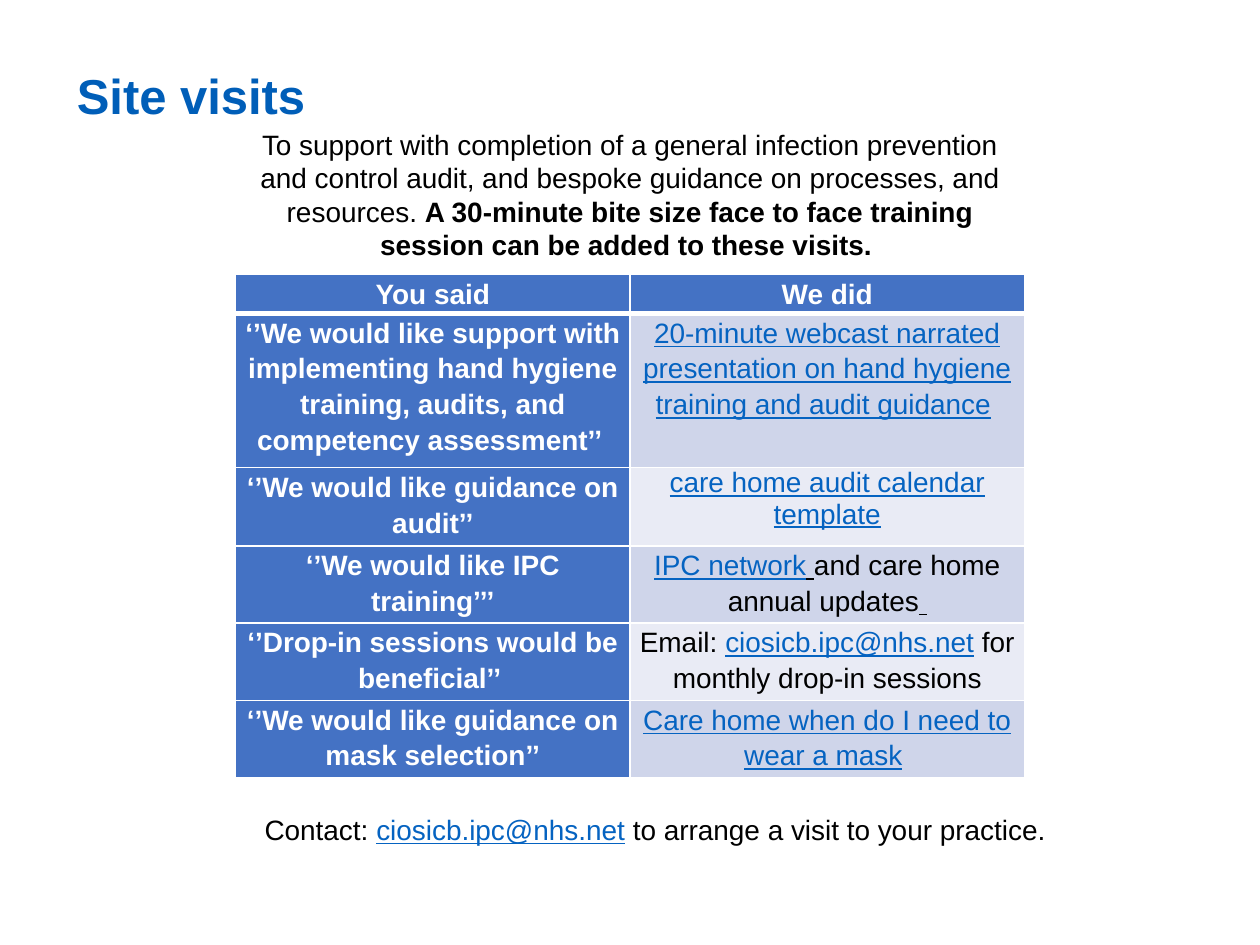
from lxml.etree import SubElement
from pptx import Presentation
from pptx.dml.color import RGBColor
from pptx.enum.text import MSO_ANCHOR, PP_ALIGN
from pptx.oxml.ns import qn
from pptx.util import Inches, Pt

TITLE_BLUE = RGBColor(0x00, 0x5E, 0xB8)
LINK_BLUE = RGBColor(0x05, 0x63, 0xC1)
HEADER_BLUE = RGBColor(0x44, 0x72, 0xC4)
BAND_DARK = RGBColor(0xCF, 0xD5, 0xEA)
BAND_LIGHT = RGBColor(0xE9, 0xEB, 0xF5)
BLACK = RGBColor(0, 0, 0)
WHITE = RGBColor(0xFF, 0xFF, 0xFF)

# Run styles: colour, bold, underlined
PLAIN = (BLACK, False, False)
STRONG = (BLACK, True, False)
HEADING = (WHITE, True, False)
LINK = (LINK_BLUE, False, True)
UNDERLINED = (BLACK, False, True)
TITLE = (TITLE_BLUE, True, False)

EMAIL = ("ciosicb.ipc@nhs.net", LINK)
INTRO = [
    ("To support with completion of a general infection prevention and control audit, "
     "and bespoke guidance on processes, and resources. ", PLAIN),
    ("A 30-minute bite size face to face training session can be added to these visits. ", STRONG),
]
CONTACT = [("Contact: ", PLAIN), EMAIL, (" to arrange a visit to your practice.", PLAIN)]

# You said, we did, row height
ROWS = [
    ("You said", [("We did", HEADING)], 0.3),
    ("‘’We would like support with implementing hand hygiene training, audits, "
     "and competency assessment’’ ",
     [("20-minute webcast narrated presentation on hand hygiene training and audit guidance", LINK),
      (" ", PLAIN)], 1.22),
    ("‘’We would like guidance on audit’’",
     [("care home audit calendar template", LINK)], 0.62),
    ("‘’We would like IPC training’’’",
     [("IPC network", LINK), (" ", UNDERLINED), ("and care home annual updates", PLAIN),
      (" ", UNDERLINED)], 0.61),
    ("‘’Drop-in sessions would be beneficial’’ ",
     [("Email: ", PLAIN), EMAIL, (" for monthly drop-in sessions", PLAIN)], 0.61),
    ("‘’We would like guidance on mask selection’’",
     [("Care home when do I need to wear a mask", LINK), (" ", PLAIN)], 0.61),
]
SINGLE_SPACED_ROW = 2
COLUMN_WIDTH = 3.13


def add_runs(paragraph, runs, size=16, align=PP_ALIGN.CENTER):
    paragraph.alignment = align
    for text, (colour, bold, underlined) in runs:
        run = paragraph.add_run()
        run.text = text
        run.font.name = "Arial"
        run.font.size = Pt(size)
        run.font.bold = bold
        run.font.underline = underlined
        run.font.color.rgb = colour


def add_text(slide, runs, left, top, width, height, anchor, wrap):
    frame = slide.shapes.add_textbox(*map(Inches, (left, top, width, height))).text_frame
    frame.word_wrap = wrap
    frame.vertical_anchor = anchor
    add_runs(frame.paragraphs[0], runs)


def add_borders(cell, bottom_width):
    """Draw white borders; the schema wants them ahead of the cell's fill."""
    properties = cell._tc.get_or_add_tcPr()
    for index, side in enumerate("LRTB"):
        width = bottom_width if side == "B" else 1
        line = SubElement(properties, qn(f"a:ln{side}"), w=str(Pt(width)))
        fill = SubElement(line, qn("a:solidFill"))
        SubElement(fill, qn("a:srgbClr"), val=str(WHITE))
        properties.insert(index, line)


def fill_cell(cell, runs, fill, single_spaced, bottom_width):
    cell.margin_left = cell.margin_right = Inches(0.07)
    cell.margin_top = cell.margin_bottom = 0
    cell.fill.solid()
    cell.fill.fore_color.rgb = fill
    paragraph = cell.text_frame.paragraphs[0]
    if not single_spaced:
        paragraph.line_spacing = 1.15
        paragraph.space_after = Pt(10)
    add_runs(paragraph, runs)
    add_borders(cell, bottom_width)


def add_feedback_table(slide):
    total_height = sum(height for _, _, height in ROWS)
    table = slide.shapes.add_table(
        len(ROWS), 2, Inches(1.87), Inches(2.18),
        Inches(2 * COLUMN_WIDTH), Inches(total_height)).table
    for column in table.columns:
        column.width = Inches(COLUMN_WIDTH)
    for index, (said, did, height) in enumerate(ROWS):
        table.rows[index].height = Inches(height)
        band = HEADER_BLUE if index == 0 else BAND_DARK if index % 2 else BAND_LIGHT
        bottom_width = 3 if index == 0 else 1
        fill_cell(table.cell(index, 0), [(said, HEADING)], HEADER_BLUE, False, bottom_width)
        fill_cell(table.cell(index, 1), did, band, index == SINGLE_SPACED_ROW, bottom_width)


def main():
    deck = Presentation()
    deck.slide_width, deck.slide_height = Inches(10), Inches(7.5)
    slide = deck.slides.add_slide(deck.slide_layouts[5])

    title = slide.shapes.title
    title.left, title.top, title.width, title.height = map(Inches, (0.51, 0.36, 6.06, 0.79))
    title.text_frame.vertical_anchor = MSO_ANCHOR.MIDDLE
    add_runs(title.text_frame.paragraphs[0], [("Site visits", TITLE)], 28, PP_ALIGN.LEFT)

    add_text(slide, INTRO, 1.93, 0.96, 6.14, 1.38, MSO_ANCHOR.TOP, True)
    add_text(slide, CONTACT, 0.4, 6.4, 9.6, 0.36, MSO_ANCHOR.MIDDLE, False)
    add_feedback_table(slide)
    deck.save("out.pptx")


if __name__ == "__main__":
    main()
